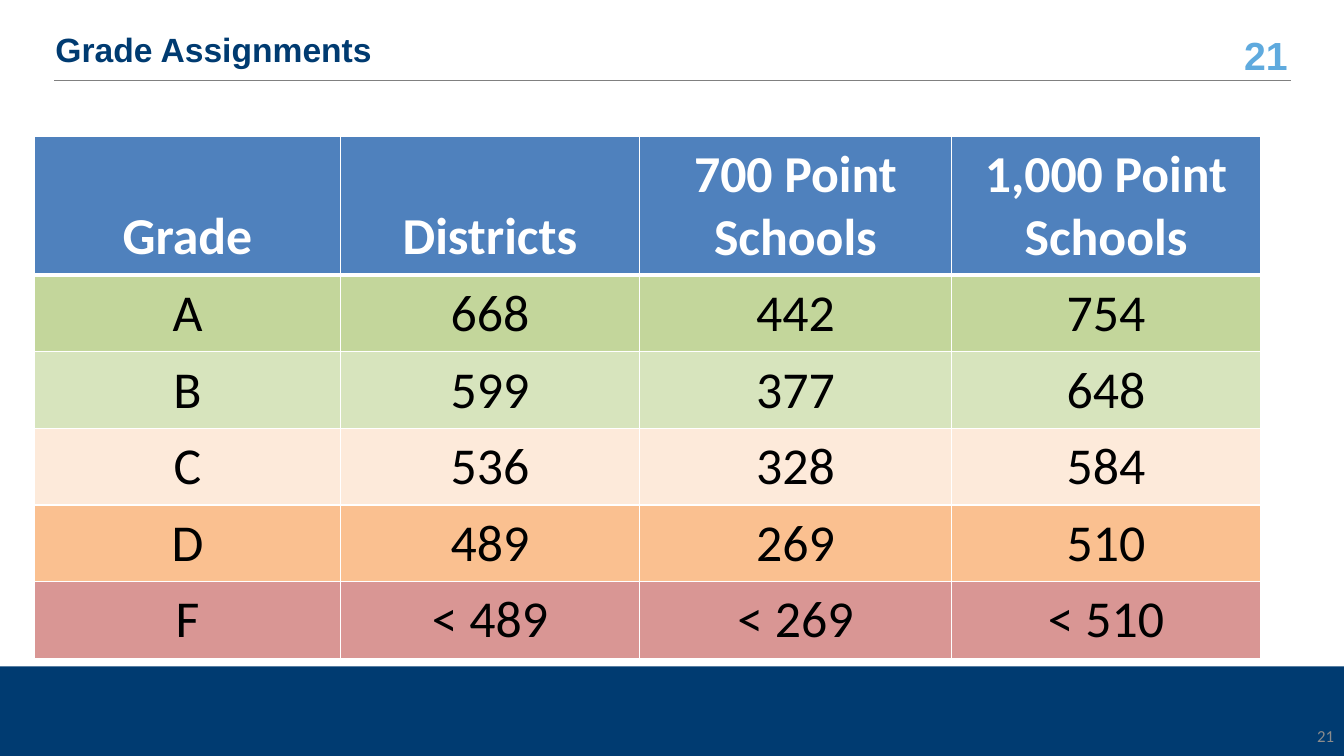
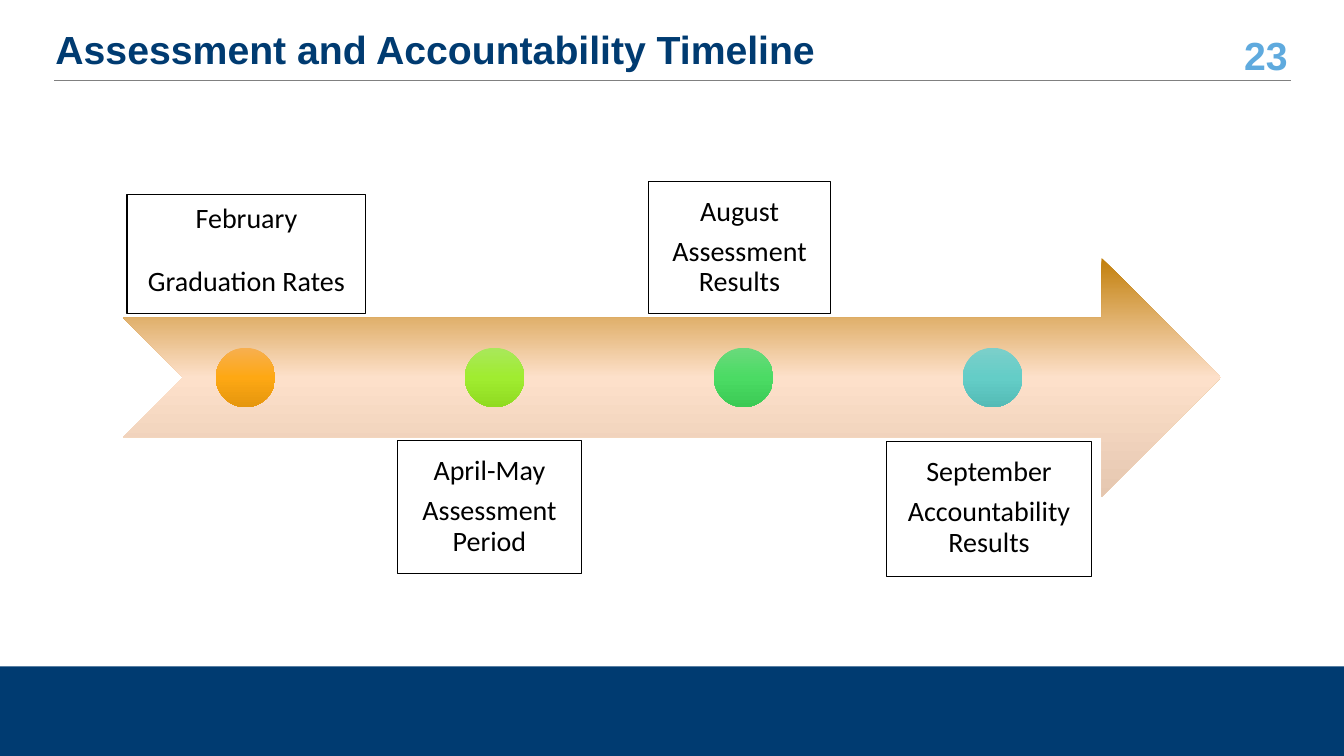
from copy import deepcopy

from lxml import etree
from pptx import Presentation
from pptx.dml.color import RGBColor
from pptx.enum.shapes import MSO_CONNECTOR, MSO_SHAPE
from pptx.enum.text import MSO_ANCHOR, MSO_AUTO_SIZE, PP_ALIGN
from pptx.oxml.ns import qn
from pptx.util import Inches, Pt

LEFT, CENTER, RIGHT = PP_ALIGN.LEFT, PP_ALIGN.CENTER, PP_ALIGN.RIGHT
TOP, MIDDLE, BOTTOM = MSO_ANCHOR.TOP, MSO_ANCHOR.MIDDLE, MSO_ANCHOR.BOTTOM
RECT, OVAL, ARROW = MSO_SHAPE.RECTANGLE, MSO_SHAPE.OVAL, MSO_SHAPE.NOTCHED_RIGHT_ARROW
STRAIGHT = MSO_CONNECTOR.STRAIGHT
TITLE_ONLY = 5

COLORS = {
    "navy": "003B71", "sky": "5FAADE", "rule": "808080", "footer": "8C8C8C",
    "white": "FFFFFF", "black": "000000", "header": "4F81BD",
    "A": "C3D69B", "B": "D7E4BD", "C": "FDEADA", "D": "FAC090", "F": "D99694",
}
GRADIENTS = {
    "arrow": ("C27F0A", "FDE0CA", "E5C7B0"),
    "orange": ("F7AF4F", "FEA813", "E5960E"),
    "lime": ("A9E85B", "A0EC30", "90DB21"),
    "green": ("6ADA7C", "4BDB64", "3BCA54"),
    "teal": ("7CCFCA", "64CDC7", "54BBB6"),
}

GRADES = [
    ("Grade", "Districts", "700 Point Schools", "1,000 Point Schools"),
    ("A", "668", "442", "754"),
    ("B", "599", "377", "648"),
    ("C", "536", "328", "584"),
    ("D", "489", "269", "510"),
    ("F", "< 489", "< 269", "< 510"),
]

# lines, box, anchor, gap between the lines in points, dot gradient
MILESTONES = [
    (("February", "Graduation Rates"), (1.26, 1.93, 2.37, 1.18), BOTTOM, 23, "orange"),
    (("April-May", "Assessment Period"), (3.94, 4.37, 1.83, 1.32), TOP, 7, "lime"),
    (("August", "Assessment Results"), (6.43, 1.8, 1.81, 1.31), BOTTOM, 7, "green"),
    (("September", "Accountability Results"), (8.79, 4.38, 2.04, 1.34), TOP, 7, "teal"),
]


def rgb(name):
    return RGBColor.from_string(COLORS[name])


class Deck:
    def __init__(self):
        self.prs = Presentation()
        self.prs.slide_width, self.prs.slide_height = Inches(13.33), Inches(7.5)
        self.s = None

    def slide(self, title, size, number):
        """Start a slide with the shared band, rule, title and page number."""
        self.s = self.prs.slides.add_slide(self.prs.slide_layouts[TITLE_ONLY])
        self.shape(RECT, (-0.01, 6.61, 13.34, 0.95), fill="navy")
        self.text((12.07, 0.33, 0.8, 0.42), number, 28, "sky", "Arial", True)
        self.rule(0.54, 12.8, 0.8)
        sp = self.s.shapes.title
        sp.left, sp.top, sp.width, sp.height = map(Inches, (0.45, 0.3, 11.6, 0.42))
        tf = sp.text_frame
        tf.text = title
        tf.auto_size = MSO_AUTO_SIZE.NONE
        tf.vertical_anchor = MIDDLE
        p = tf.paragraphs[0]
        p.line_spacing = 0.9
        self.style(p, size, "navy", "Arial", True, LEFT)

    def style(self, p, size, color, font="Calibri", bold=False, align=CENTER):
        p.alignment = align
        for r in p.runs:
            r.font.name, r.font.size, r.font.bold = font, Pt(size), bold
            r.font.color.rgb = rgb(color)

    def text(self, box, text, size, color, font="Calibri", bold=False):
        """Add a right-aligned line of text, centred vertically."""
        tf = self.s.shapes.add_textbox(*map(Inches, box)).text_frame
        tf.word_wrap = True
        tf.vertical_anchor = MIDDLE
        tf.text = text
        self.style(tf.paragraphs[0], size, color, font, bold, RIGHT)

    def rule(self, x1, x2, y):
        line = self.s.shapes.add_connector(
            STRAIGHT, Inches(x1), Inches(y), Inches(x2), Inches(y))
        line.line.color.rgb = rgb("rule")
        line.line.width = Pt(0.5)
        etree.SubElement(line._element.spPr, qn("a:effectLst"))

    def shape(self, kind, box, fill=None, line=None):
        sp = self.s.shapes.add_shape(kind, *map(Inches, box))
        sp.shadow.inherit = False
        if fill in GRADIENTS:
            self.gradient(sp, GRADIENTS[fill])
        elif fill:
            sp.fill.solid()
            sp.fill.fore_color.rgb = rgb(fill)
        else:
            sp.fill.background()
        if line:
            sp.line.color.rgb = rgb(line)
            sp.line.width = Pt(0.75)
        else:
            sp.line.fill.background()
        return sp

    def gradient(self, sp, colors):
        """Fill from top to bottom with three evenly spaced colours."""
        sp.fill.gradient()
        sp.fill.gradient_angle = 270
        stops = sp._element.spPr.find(".//" + qn("a:gsLst"))
        stops.insert(1, deepcopy(stops[0]))
        for i, (stop, color) in enumerate(zip(sp.fill.gradient_stops, colors)):
            stop.position = i / 2
            stop.color.rgb = RGBColor.from_string(color)

    def label(self, lines, box, anchor, gap):
        tf = self.shape(RECT, box, line="black").text_frame
        tf.word_wrap = True
        tf.vertical_anchor = anchor
        tf.margin_left = tf.margin_right = tf.margin_top = tf.margin_bottom = Inches(0.16)
        tf.text = "\n".join(lines)
        for p in tf.paragraphs:
            p.line_spacing = 0.9
            self.style(p, 20, "black")
        tf.paragraphs[0].space_after = Pt(gap)

    def table(self, left, top, widths, heights, rows):
        box = (left, top, sum(widths), sum(heights))
        table = self.s.shapes.add_table(len(rows), len(widths), *map(Inches, box)).table
        for column, width in zip(table.columns, widths):
            column.width = Inches(width)
        for i, (row, height) in enumerate(zip(rows, heights)):
            table.rows[i].height = Inches(height)
            for j, text in enumerate(row):
                self.cell(table.cell(i, j), text, i, row[0])

    def cell(self, cell, text, row, grade):
        header = row == 0
        cell.text = text
        cell.vertical_anchor = BOTTOM if header else TOP
        cell.margin_left = cell.margin_right = Inches(0.13)
        cell.margin_top = cell.margin_bottom = Inches(0.07)
        self.style(cell.text_frame.paragraphs[0], 37,
                   "white" if header else "black", bold=header)
        widths = {"L": 1, "R": 1, "T": 3 if row == 1 else 1, "B": 3 if header else 1}
        for side, width in widths.items():
            self.border(cell, side, width)
        cell.fill.solid()
        cell.fill.fore_color.rgb = rgb("header" if header else grade)

    def border(self, cell, side, width):
        ln = etree.SubElement(cell._tc.get_or_add_tcPr(), qn("a:ln" + side), w=str(Pt(width)))
        fill = etree.SubElement(ln, qn("a:solidFill"))
        etree.SubElement(fill, qn("a:srgbClr"), val=COLORS["white"])


def grade_slide(deck):
    deck.slide("Grade Assignments", 24, "21")
    deck.text((12.53, 7.13, 0.8, 0.34), "21", 12, "footer")
    deck.table(0.34, 1.35, (3.04, 2.96, 3.1, 3.06), [1.38] + [0.76] * 5, GRADES)


def timeline_slide(deck):
    deck.slide("Assessment and Accountability Timeline", 28, "23")
    deck.shape(ARROW, (1.22, 2.56, 10.89, 2.37), fill="arrow")
    for i, (lines, box, anchor, gap, dot) in enumerate(MILESTONES):
        deck.label(lines, box, anchor, gap)
        deck.shape(OVAL, (2.14 + 2.47 * i, 3.45, 0.59, 0.59), fill=dot)


def main():
    deck = Deck()
    grade_slide(deck)
    timeline_slide(deck)
    deck.prs.save("out.pptx")


if __name__ == "__main__":
    main()
